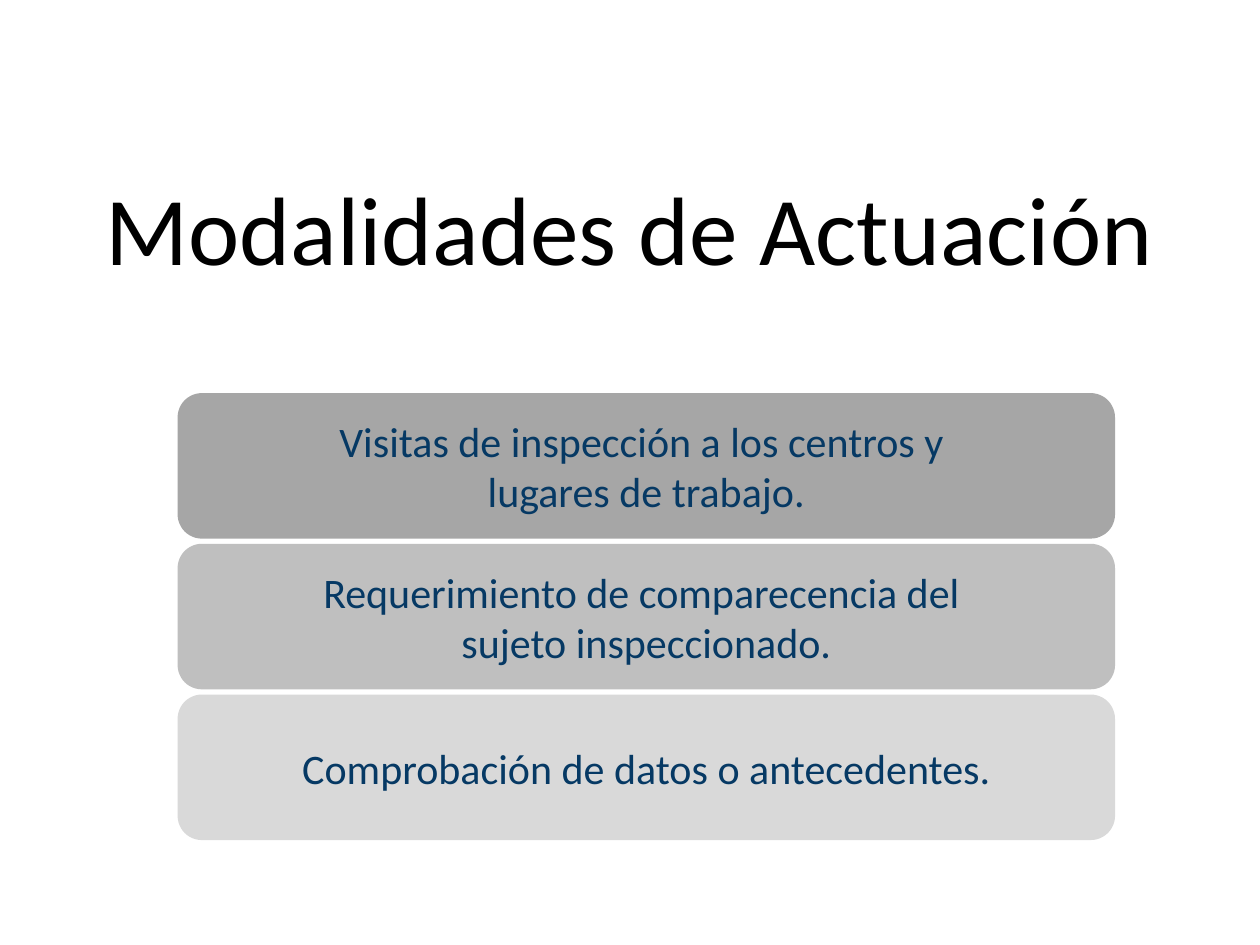
"""Build the slide listing the inspection's modes of action."""
import dataclasses

import pptx
import pptx.dml.color
import pptx.enum.shapes
import pptx.enum.text
import pptx.util

RGBColor = pptx.dml.color.RGBColor
BLACK = RGBColor(0x00, 0x00, 0x00)
NAVY = RGBColor(0x06, 0x39, 0x64)
DARK_GRAY = RGBColor(0xA6, 0xA6, 0xA6)
MID_GRAY = RGBColor(0xBF, 0xBF, 0xBF)
LIGHT_GRAY = RGBColor(0xD9, 0xD9, 0xD9)

FONT = "Calibri"
WIDTH, HEIGHT = pptx.util.Inches(10), pptx.util.Inches(7.5)
BAR_LEFT, BAR_WIDTH = 0.141 * WIDTH, 0.744 * WIDTH
FIRST_ROW, ROW_PITCH, BAR_HEIGHT = 0.416 * HEIGHT, 0.1595 * HEIGHT, 0.154 * HEIGHT


@dataclasses.dataclass(frozen=True)
class Mode:
    """One mode of action and the fill of its bar."""

    text: str
    fill: RGBColor


MODES = (
    Mode("Visitas de inspección a los centros y \nlugares de trabajo.", DARK_GRAY),
    Mode("Requerimiento de comparecencia del \nsujeto inspeccionado.", MID_GRAY),
    Mode("Comprobación de datos o antecedentes.", LIGHT_GRAY),
)


def write(frame: pptx.text.text.TextFrame, text: str, size: float, color: RGBColor,
          anchor: pptx.enum.text.MSO_ANCHOR, spacing: float = 1.0) -> None:
    """Fill a frame with centred text."""
    frame.text = text
    frame.word_wrap = True
    frame.vertical_anchor = anchor
    for para in frame.paragraphs:
        para.alignment = pptx.enum.text.PP_ALIGN.CENTER
        para.line_spacing = spacing
        for span in para.runs:
            span.font.name = FONT
            span.font.size = pptx.util.Pt(size)
            span.font.color.rgb = color


def draw_title(page: pptx.slide.Slide, text: str) -> None:
    """Draw the heading across the page."""
    box = page.shapes.add_textbox(
        int(0.05 * WIDTH), int(0.143 * HEIGHT), int(0.9 * WIDTH), int(HEIGHT / 6))
    write(box.text_frame, text, 55.5, BLACK, pptx.enum.text.MSO_ANCHOR.BOTTOM, 0.9)


def draw_mode(page: pptx.slide.Slide, row: int, mode: Mode) -> None:
    """Draw one rounded bar in the given row."""
    bar = page.shapes.add_shape(
        pptx.enum.shapes.MSO_SHAPE.ROUNDED_RECTANGLE, int(BAR_LEFT),
        int(FIRST_ROW + row * ROW_PITCH), int(BAR_WIDTH), int(BAR_HEIGHT))
    bar.shadow.inherit = False
    bar.fill.solid()
    bar.fill.fore_color.rgb = mode.fill
    bar.line.fill.background()
    write(bar.text_frame, mode.text, 24, NAVY, pptx.enum.text.MSO_ANCHOR.MIDDLE)


def main() -> None:
    """Create and save the deck."""
    deck = pptx.Presentation()
    deck.slide_width, deck.slide_height = WIDTH, HEIGHT
    page = deck.slides.add_slide(deck.slide_layouts[6])
    draw_title(page, "Modalidades de Actuación")
    for row, mode in enumerate(MODES):
        draw_mode(page, row, mode)
    deck.save("out.pptx")


if __name__ == "__main__":
    main()
